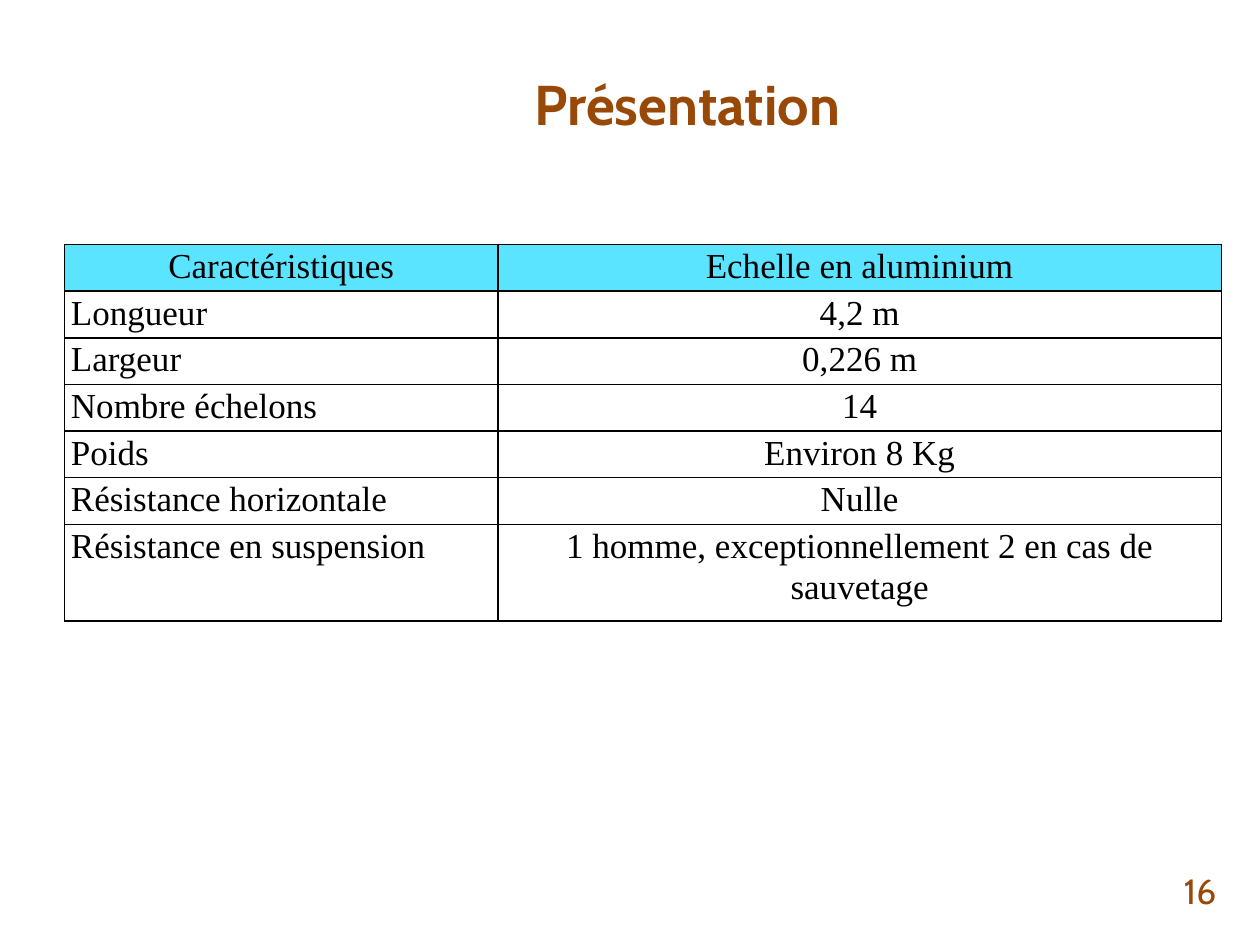
from lxml.etree import SubElement
from pptx import Presentation
from pptx.dml.color import RGBColor
from pptx.enum.text import MSO_ANCHOR, PP_ALIGN
from pptx.oxml.ns import qn
from pptx.util import Cm, Pt

COLORS = {"brown": "984807", "cyan": "5BE4FF", "black": "000000"}
CHARACTERISTICS = [
    ("Caractéristiques", "Echelle en aluminium"),
    ("Longueur", "4,2 m"),
    ("Largeur", "0,226 m"),
    ("Nombre échelons", "14"),
    ("Poids", "Environ 8 Kg"),
    ("Résistance horizontale", "Nulle"),
    ("Résistance en suspension", "1 homme, exceptionnellement 2 en cas de sauvetage"),
]


def color(name):
    return RGBColor.from_string(COLORS[name])


def style_paragraph(para, font_name, size, color_name, align, bold=False):
    para.alignment = align
    para.font.name = font_name
    para.font.size = Pt(size)
    para.font.bold = bold
    para.font.color.rgb = color(color_name)


def add_label(page, box, text, size, align, bold=False):
    frame = page.shapes.add_textbox(*map(Cm, box)).text_frame
    frame.word_wrap = True
    frame.vertical_anchor = MSO_ANCHOR.MIDDLE
    frame.text = text
    style_paragraph(frame.paragraphs[0], "Cabin", size, "brown", align, bold)


def add_borders(cell):
    # Border elements must come before the cell fill
    properties = cell._tc.get_or_add_tcPr()
    for side in ("lnL", "lnR", "lnT", "lnB"):
        line = SubElement(properties, qn(f"a:{side}"), w=str(Pt(1)))
        fill = SubElement(line, qn("a:solidFill"))
        SubElement(fill, qn("a:srgbClr"), val=COLORS["black"])


def fill_cell(cell, text, align, is_header):
    cell.margin_left = cell.margin_right = Cm(0.13)
    cell.margin_top = cell.margin_bottom = 0
    cell.text = text
    para = cell.text_frame.paragraphs[0]
    style_paragraph(para, "Times New Roman", 20, "black", align)
    para.line_spacing = 1.07
    para.space_after = Pt(8)
    add_borders(cell)
    if is_header:
        cell.fill.solid()
        cell.fill.fore_color.rgb = color("cyan")
    else:
        cell.fill.background()


def add_characteristics(page, box):
    left, top, width, height = box
    row_count = len(CHARACTERISTICS)
    table = page.shapes.add_table(row_count, 2, *map(Cm, box)).table
    table.first_row = table.horz_banding = False

    # The last row takes the height left by the single-line rows
    label_width, row_height = 8.74, 0.94
    table.columns[0].width = Cm(label_width)
    table.columns[1].width = Cm(width - label_width)
    for row in table.rows:
        row.height = Cm(row_height)
    table.rows[row_count - 1].height = Cm(height - row_height * (row_count - 1))

    for index, (label, value) in enumerate(CHARACTERISTICS):
        is_header = index == 0
        label_align = PP_ALIGN.CENTER if is_header else PP_ALIGN.JUSTIFY
        fill_cell(table.cell(index, 0), label, label_align, is_header)
        fill_cell(table.cell(index, 1), value, PP_ALIGN.CENTER, is_header)


def main():
    deck = Presentation()
    deck.slide_width, deck.slide_height = Cm(25.4), Cm(19.05)
    page = deck.slides.add_slide(deck.slide_layouts[6])

    # Title, page number and table
    add_label(page, (3.1, 0.76, 21.51, 2.62), "Présentation", 32, PP_ALIGN.CENTER, bold=True)
    add_label(page, (18.85, 17.45, 5.92, 1.02), "16", 20, PP_ALIGN.RIGHT)
    add_characteristics(page, (1.3, 4.93, 23.32, 7.59))
    deck.save("out.pptx")


if __name__ == "__main__":
    main()
